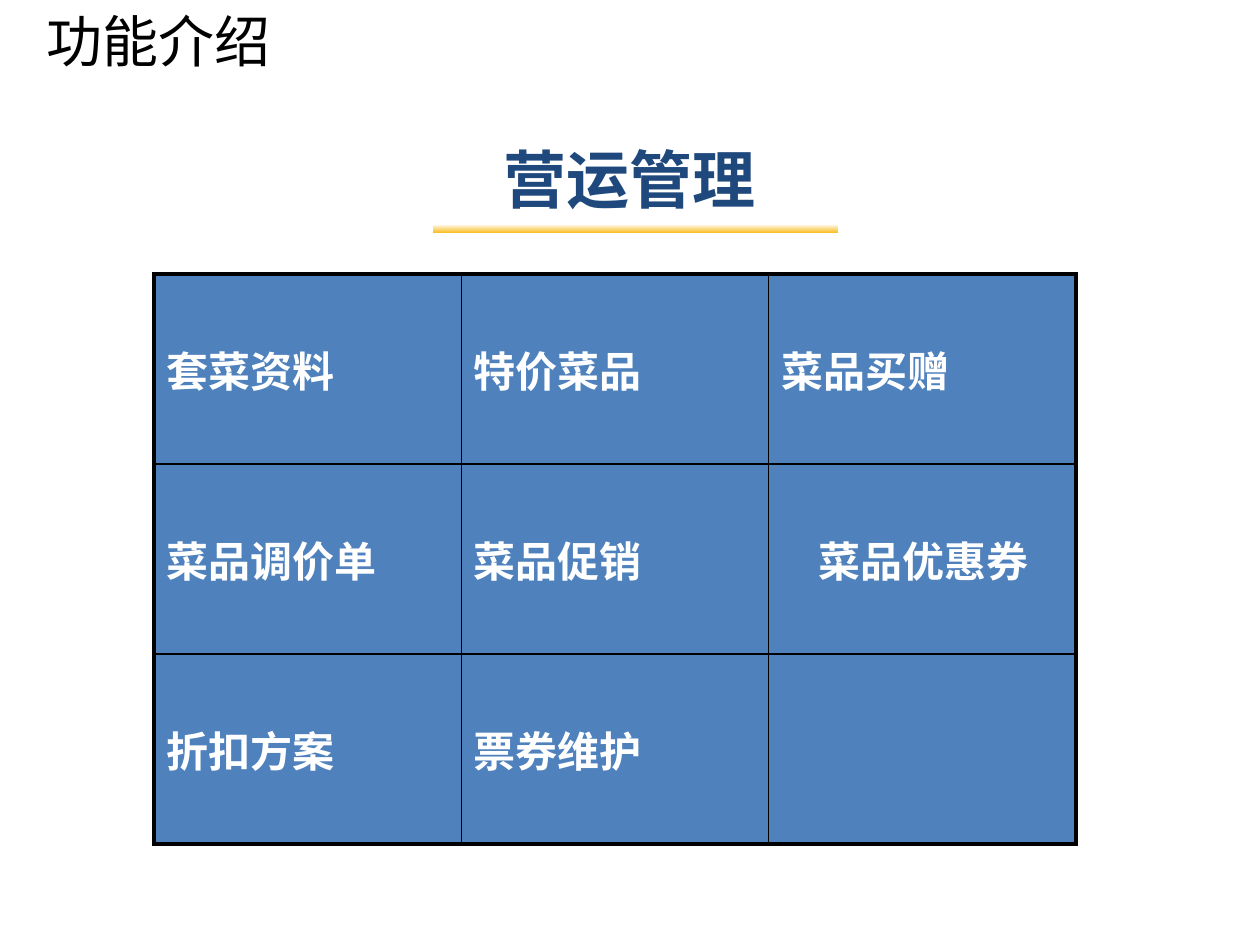
from dataclasses import dataclass

from lxml.etree import SubElement
from pptx import Presentation
from pptx.dml.color import RGBColor
from pptx.enum.text import MSO_ANCHOR, MSO_AUTO_SIZE, PP_ALIGN
from pptx.oxml.ns import qn
from pptx.util import Emu, Pt

PIXELS_PER_INCH = 126


def px(length):
    return Emu(round(length * 914400 / PIXELS_PER_INCH))


@dataclass(frozen=True)
class Theme:
    black: str = "000000"
    white: str = "FFFFFF"
    navy: str = "1F497D"
    blue: str = "4F81BD"
    amber: str = "F9B407"
    heading_font: str = "Calibri"
    cell_font: str = "Arial"
    title_size: int = 32
    heading_size: int = 36
    cell_size: int = 24
    outer_border: float = 2.25
    inner_border: float = 1


def write_text(frame, text, *, font, size, color, bold=False,
               align=PP_ALIGN.LEFT, anchor=MSO_ANCHOR.TOP):
    frame.word_wrap = True
    frame.vertical_anchor = anchor
    paragraph = frame.paragraphs[0]
    paragraph.alignment = align
    paragraph.space_before = Pt(0)
    run = paragraph.add_run()
    run.text = text
    run.font.name = font
    run.font.size = Pt(size)
    run.font.bold = bold
    run.font.color.rgb = RGBColor.from_string(color)


def set_border(cell, side, width, color):
    line = SubElement(cell._tc.get_or_add_tcPr(), qn(f"a:ln{side}"), w=str(Pt(width)))
    fill = SubElement(line, qn("a:solidFill"))
    SubElement(fill, qn("a:srgbClr"), val=color)


class SlideBuilder:
    def __init__(self, slide, theme):
        self.slide = slide
        self.theme = theme

    def title(self, text, left, top, width, height):
        shape = self.slide.shapes.title
        shape.left, shape.top, shape.width, shape.height = map(px, (left, top, width, height))
        shape.text_frame.auto_size = MSO_AUTO_SIZE.NONE
        write_text(shape.text_frame, text, font=self.theme.heading_font,
                   size=self.theme.title_size, color=self.theme.black)

    def heading(self, text, left, top, width, height):
        shape = self.slide.shapes.add_textbox(*map(px, (left, top, width, height)))
        write_text(shape.text_frame, text, font=self.theme.heading_font,
                   size=self.theme.heading_size, color=self.theme.navy, bold=True,
                   align=PP_ALIGN.CENTER, anchor=MSO_ANCHOR.MIDDLE)

    def gradient_bar(self, left, top, width, height):
        shape = self.slide.shapes.add_shape(1, *map(px, (left, top, width, height)))
        shape.shadow.inherit = False
        shape.fill.gradient()
        shape.fill.gradient_angle = 270
        for stop, color in zip(shape.fill.gradient_stops, (self.theme.white, self.theme.amber)):
            stop.color.rgb = RGBColor.from_string(color)
        shape.line.color.rgb = RGBColor.from_string(self.theme.white)
        shape.line.width = Pt(0.75)

    def table(self, rows, left, top, width, height, indents):
        row_count, column_count = len(rows), len(rows[0])
        frame = self.slide.shapes.add_table(
            row_count, column_count, *map(px, (left, top, width, height)))
        table = frame.table
        table.first_row = table.horz_banding = False
        for row_index, row in enumerate(rows):
            for column_index, text in enumerate(row):
                cell = table.cell(row_index, column_index)
                outer_sides = {
                    "L": column_index == 0,
                    "R": column_index == column_count - 1,
                    "T": row_index == 0,
                    "B": row_index == row_count - 1,
                }
                for side, is_outer in outer_sides.items():
                    border = self.theme.outer_border if is_outer else self.theme.inner_border
                    set_border(cell, side, border, self.theme.black)
                cell.fill.solid()
                cell.fill.fore_color.rgb = RGBColor.from_string(self.theme.blue)
                cell.vertical_anchor = MSO_ANCHOR.MIDDLE
                if text in indents:
                    cell.margin_left = px(indents[text])
                if text:
                    write_text(cell.text_frame, text, font=self.theme.cell_font,
                               size=self.theme.cell_size, color=self.theme.white,
                               bold=True, anchor=MSO_ANCHOR.MIDDLE)
                    cell.vertical_anchor = MSO_ANCHOR.MIDDLE


def main():
    presentation = Presentation()
    presentation.slide_width, presentation.slide_height = px(1260), px(945)
    slide = presentation.slides.add_slide(presentation.slide_layouts[5])
    builder = SlideBuilder(slide, Theme())

    # Title and section heading
    builder.title("功能介绍", 34, 0, 1134, 86)
    builder.heading("营运管理", 94, 113, 1071, 131)
    builder.gradient_bar(432, 224, 407, 10)

    # Grid of functions
    functions = [
        ["套菜资料", "特价菜品", "菜品买赠"],
        ["菜品调价单", "菜品促销", "菜品优惠券"],
        ["折扣方案", "票券维护", ""],
    ]
    builder.table(functions, 154, 274, 922, 570, indents={"菜品优惠券": 50})

    presentation.save("out.pptx")


if __name__ == "__main__":
    main()
